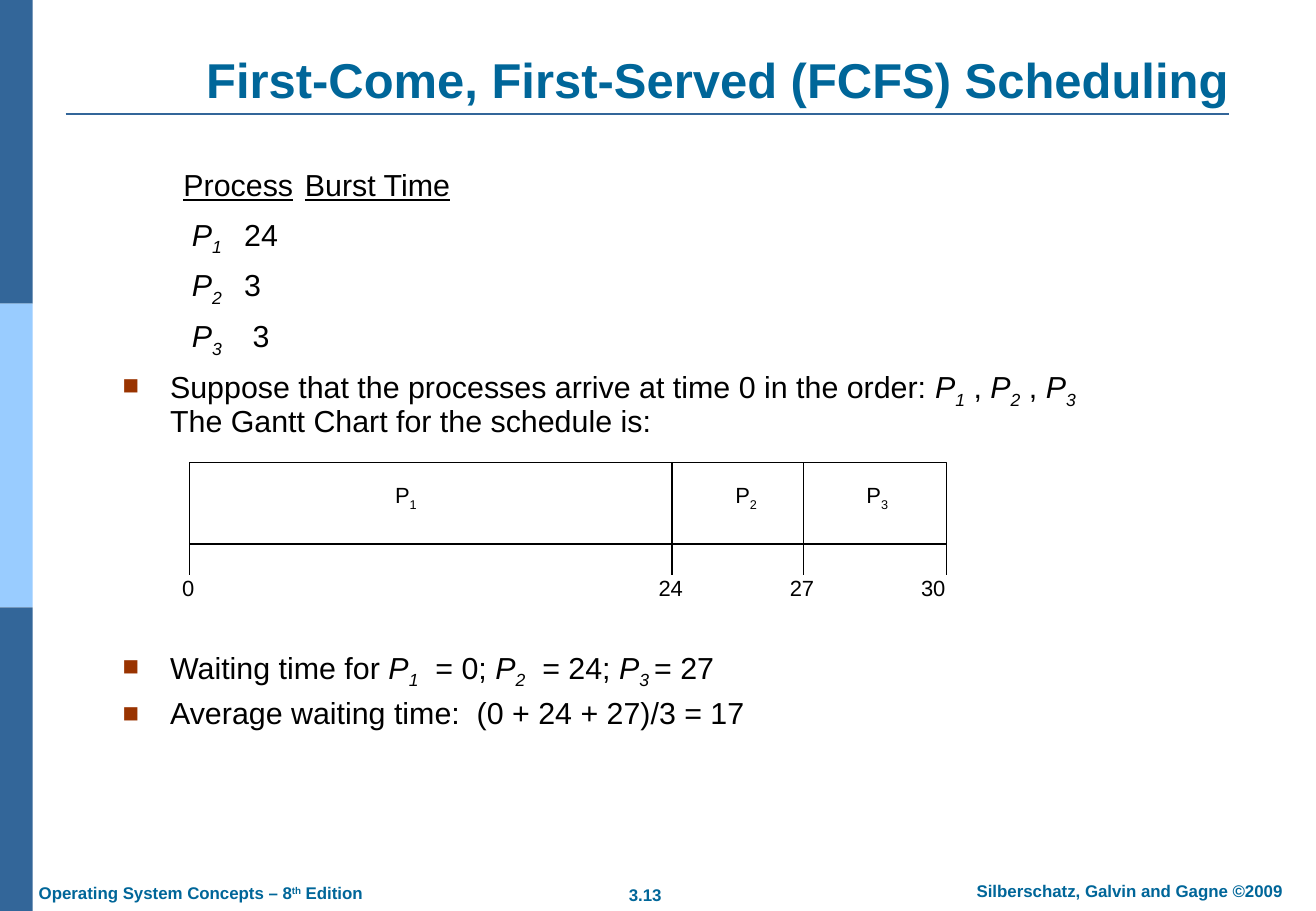
from lxml.etree import SubElement
from pptx import Presentation
from pptx.dml.color import RGBColor as Rgb
from pptx.enum.shapes import MSO_CONNECTOR as Connector, MSO_SHAPE as Shape
from pptx.enum.text import MSO_ANCHOR as Anchor, MSO_AUTO_SIZE as AutoSize, PP_ALIGN as Align
from pptx.oxml.ns import qn
from pptx.util import Emu, Pt

SCALE = 9144  # EMU per px, 100 px to the inch
FONT = "Arial"
COLORS = {"bar": "336699", "bar_light": "99CCFF", "heading": "006699",
          "bullet": "993300", "ink": "000000", "paper": "FFFFFF"}


def px(length):
    return Emu(length * SCALE)


def color(name):
    return Rgb.from_string(COLORS[name])


def write(paragraph, text, size=18, ink="ink", bold=False, italic=False,
          underline=False, baseline=0):
    run = paragraph.add_run()
    run.text = text
    font = run.font
    font.name, font.size, font.bold = FONT, Pt(size), bold
    font.italic, font.underline = italic, underline
    font.color.rgb = color(ink)
    if baseline:
        run._r.get_or_add_rPr().set("baseline", str(baseline * 1000))


def write_sentence(paragraph, text):
    """Text between asterisks is a process number: *1* becomes an italic P1."""
    for index, part in enumerate(text.split("*")):
        if index % 2:
            write(paragraph, "P", italic=True)
            write(paragraph, part, italic=True, baseline=-25)
        elif part:
            write(paragraph, part)


def place(shape, box):
    shape.left, shape.top, shape.width, shape.height = map(px, box)


def add_label(slide, box, align=Align.CENTER, anchor=Anchor.MIDDLE):
    frame = slide.shapes.add_textbox(*map(px, box)).text_frame
    frame.word_wrap = False
    frame.vertical_anchor = anchor
    paragraph = frame.paragraphs[0]
    paragraph.alignment = align
    return paragraph


def add_block(slide, box, fill, line=None):
    block = slide.shapes.add_shape(Shape.RECTANGLE, *map(px, box))
    block.shadow.inherit = False
    block.fill.solid()
    block.fill.fore_color.rgb = color(fill)
    if line:
        block.line.color.rgb = color(line)
        block.line.width = Pt(0.75)
    else:
        block.line.fill.background()


def add_rule(slide, start, end, ink, width):
    rule = slide.shapes.add_connector(Connector.STRAIGHT, *map(px, start + end))
    rule.line.color.rgb = color(ink)
    rule.line.width = Pt(width)
    SubElement(rule._element.spPr, qn("a:effectLst"))


def set_layout(paragraph, bullet=False, tabs=(), before=0):
    """Bullet, indent, tab stops and spacing of a body paragraph."""
    props = paragraph._p.get_or_add_pPr()
    indent = px(39) if bullet else 0
    props.set("marL", str(indent))
    props.set("indent", str(-indent))
    if bullet:
        tint = SubElement(props, qn("a:buClr"))
        SubElement(tint, qn("a:srgbClr"), val=COLORS["bullet"])
        SubElement(props, qn("a:buSzPct"), val="90000")
        SubElement(props, qn("a:buFont"), typeface=FONT)
        SubElement(props, qn("a:buChar"), char="■")
    else:
        SubElement(props, qn("a:buNone"))
    if tabs:
        stops = SubElement(props, qn("a:tabLst"))
        for stop in tabs:
            SubElement(stops, qn("a:tab"), pos=str(px(stop)), algn="l")
    paragraph.line_spacing = 0.9
    paragraph.space_before = Pt(before)


def add_side_bar(slide, box):
    left, top, width, height = box
    part = height // 3
    for index, fill in enumerate(("bar", "bar_light", "bar")):
        add_block(slide, (left, top + index * part, width, part), fill)


def add_footer(slide, box):
    left, top, width, height = box
    style = {"size": 10, "ink": "heading", "bold": True}
    book = add_label(slide, (left, top + 2, 291, height), Align.LEFT, Anchor.TOP)
    write(book, "Operating System Concepts – 8", **style)
    write(book, "th", baseline=30, **style)
    write(book, " Edition", **style)
    page = add_label(slide, (left + 484, top + 3, 50, height), anchor=Anchor.TOP)
    write(page, "3.13", **style)
    authors = add_label(slide, (left + width - 321, top, 321, height), anchor=Anchor.TOP)
    write(authors, "Silberschatz, Galvin and Gagne ©2009", **style)


def add_title(slide, box):
    title = slide.shapes.title
    place(title, box)
    frame = title.text_frame
    frame.auto_size = AutoSize.NONE
    frame.vertical_anchor = Anchor.BOTTOM
    heading = frame.paragraphs[0]
    heading.alignment = Align.CENTER
    write(heading, "First-Come, First-Served (FCFS) Scheduling",
          size=29, ink="heading", bold=True)


def add_body(slide, box):
    body = slide.placeholders[1]
    place(body, box)
    frame = body.text_frame
    frame.auto_size = AutoSize.NONE

    # Process and burst time columns
    columns = (139, 240)
    header = frame.paragraphs[0]
    set_layout(header, tabs=columns)
    for name in ("Process", "Burst Time"):
        write(header, "\t")
        write(header, name, underline=True)
    for number, burst in enumerate(("24", "3", " 3"), start=1):
        row = frame.add_paragraph()
        set_layout(row, tabs=columns, before=8)
        write_sentence(row, f"\t *{number}*\t{burst}")

    # Bulleted statements, with room for the Gantt chart after the first
    order = frame.add_paragraph()
    set_layout(order, bullet=True, before=8)
    write_sentence(order, "Suppose that the processes arrive at time 0 in the order: *1* , *2* , *3*")
    order.add_line_break()
    write(order, "The Gantt Chart for the schedule is:")
    for before, text in ((125, "Waiting time for *1*  = 0; *2*  = 24; *3 *= 27"),
                         (7, "Average waiting time:  (0 + 24 + 27)/3 = 17")):
        result = frame.add_paragraph()
        set_layout(result, bullet=True, before=before)
        write_sentence(result, text)


def add_gantt(slide, box):
    left, top, width, height = box
    tick, label = 25, 32
    add_block(slide, box, "paper", "ink")

    # Process names: number and centre from the left edge
    for number, centre in ((1, 178), (2, 458), (3, 566)):
        name = add_label(slide, (left + centre - 20, top + 12, 40, label))
        write(name, "P", size=13)
        write(name, str(number), size=13, baseline=-25)

    # Boundaries: time, line and label centre from the left edge
    for time, edge, centre in ((0, 0, -1), (24, 397, 396), (27, 505, 504), (30, width, 612)):
        x = left + edge
        add_rule(slide, (x, top), (x, top + height + tick), "ink", 0.75)
        mark = add_label(slide, (left + centre - 20, top + height + 20, 40, label))
        write(mark, str(time), size=13)


def main():
    deck = Presentation()
    deck.slide_width, deck.slide_height = px(1083), px(750)
    slide = deck.slides.add_slide(deck.slide_layouts[1])
    add_side_bar(slide, (0, 0, 27, 750))
    add_rule(slide, (54, 94), (1011, 94), "bar", 1.5)
    add_footer(slide, (22, 720, 1068, 28))
    add_title(slide, (117, 44, 948, 50))
    add_body(slide, (91, 135, 896, 493))
    add_gantt(slide, (156, 381, 623, 67))
    deck.save("out.pptx")


if __name__ == "__main__":
    main()
